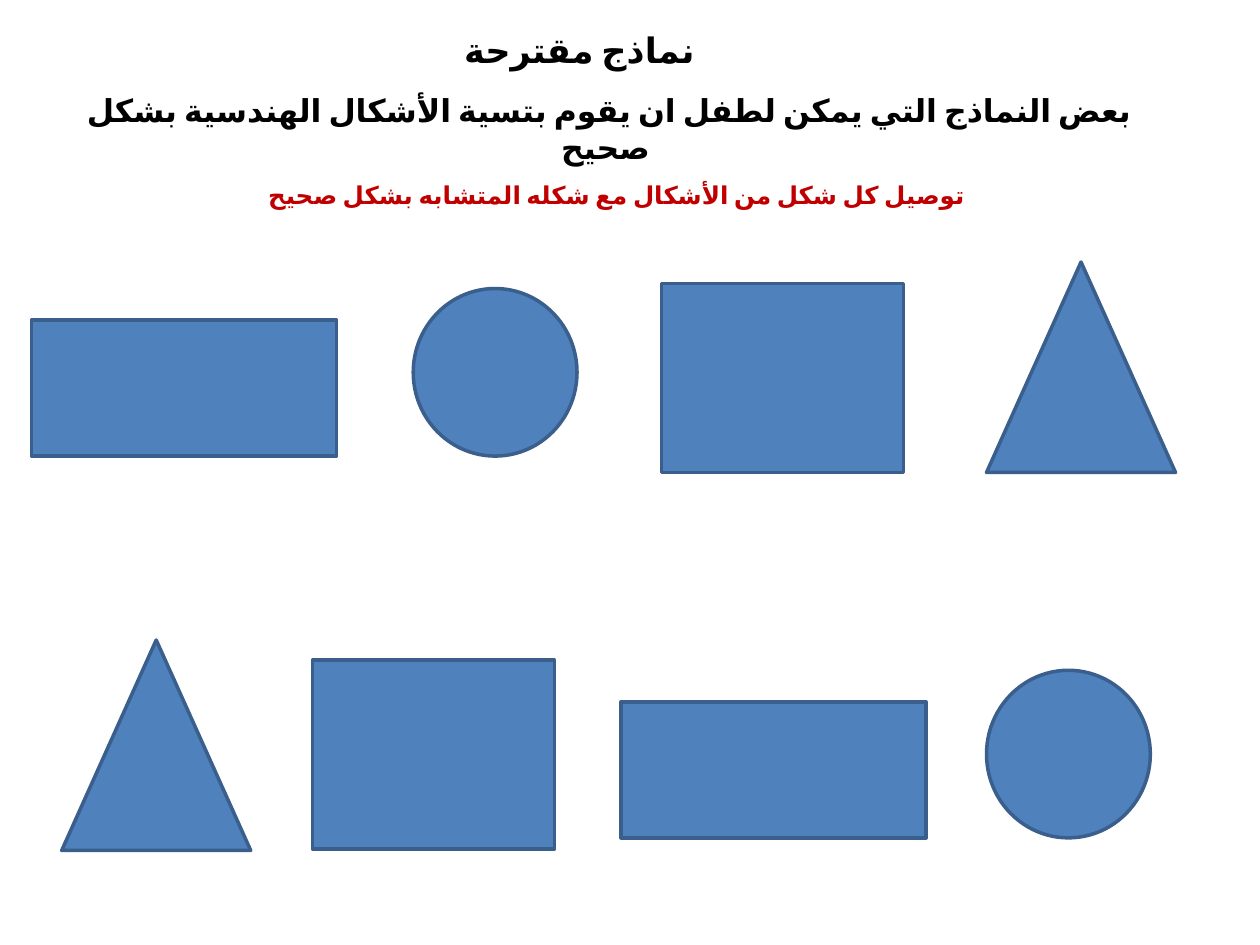
"""Build a slide of shapes for a child to match."""
import lxml.etree
import pptx
import pptx.dml.color
import pptx.enum.lang
import pptx.enum.shapes
import pptx.enum.text
import pptx.oxml.ns
import pptx.util

Inches = pptx.util.Inches
Pt = pptx.util.Pt
KIND = pptx.enum.shapes.MSO_SHAPE


def color(code):
    return pptx.dml.color.RGBColor.from_string(code)


def write(frame, text, size=18, ink="000000", bold=True, font="Calibri"):
    para = frame.paragraphs[0]
    para.alignment = pptx.enum.text.PP_ALIGN.CENTER
    run = para.add_run()
    run.text = text
    run.font.name = font
    run.font.size = Pt(size)
    run.font.bold = bold
    run.font.color.rgb = color(ink)
    run.font.language_id = pptx.enum.lang.MSO_LANGUAGE_ID.ARABIC
    props = run._r.get_or_add_rPr()
    lxml.etree.SubElement(props, pptx.oxml.ns.qn("a:cs"), typeface=font)


class Page:
    fill = "4F81BD"
    edge = "3A5F8C"
    width = 2

    def __init__(self, slide):
        self.slide = slide

    def label(self, box, text, **style):
        frame = self.slide.shapes.add_textbox(*map(Inches, box)).text_frame
        frame.word_wrap = True
        frame.auto_size = pptx.enum.text.MSO_AUTO_SIZE.SHAPE_TO_FIT_TEXT
        write(frame, text, **style)

    def figure(self, kind, left, top, size):
        shape = self.slide.shapes.add_shape(
            kind, *map(Inches, (left, top, *size)))
        shape.shadow.inherit = False
        shape.fill.solid()
        shape.fill.fore_color.rgb = color(self.fill)
        shape.line.color.rgb = color(self.edge)
        shape.line.width = Pt(self.width)


def main():
    deck = pptx.Presentation()
    deck.slide_width, deck.slide_height = Inches(10), Inches(7.5)
    page = Page(deck.slides.add_slide(deck.slide_layouts[6]))

    page.label((0.25, 0.67, 9.17, 0.4),
               "بعض النماذج التي يمكن لطفل ان يقوم بتسية الأشكال الهندسية بشكل صحيح ")
    page.label((0.75, 1.38, 8.33, 0.34),
               "توصيل كل شكل من الأشكال مع شكله المتشابه بشكل صحيح ",
               size=14, ink="C00000")
    page.label((2.67, 0.18, 3.92, 0.44), "نماذج مقترحة ", size=20)

    pairs = [
        (KIND.ISOSCELES_TRIANGLE, (1.5, 1.67), (7.83, 2.08), (0.49, 5.08)),
        (KIND.RECTANGLE, (1.92, 1.5), (5.25, 2.25), (2.48, 5.24)),
        (KIND.OVAL, (1.3, 1.33), (3.28, 2.29), (7.83, 5.32)),
        (KIND.RECTANGLE, (2.42, 1.08), (0.25, 2.54), (4.93, 5.57)),
    ]
    for kind, size, *spots in pairs:
        for left, top in spots:
            page.figure(kind, left, top, size)

    deck.save("out.pptx")


if __name__ == "__main__":
    main()
